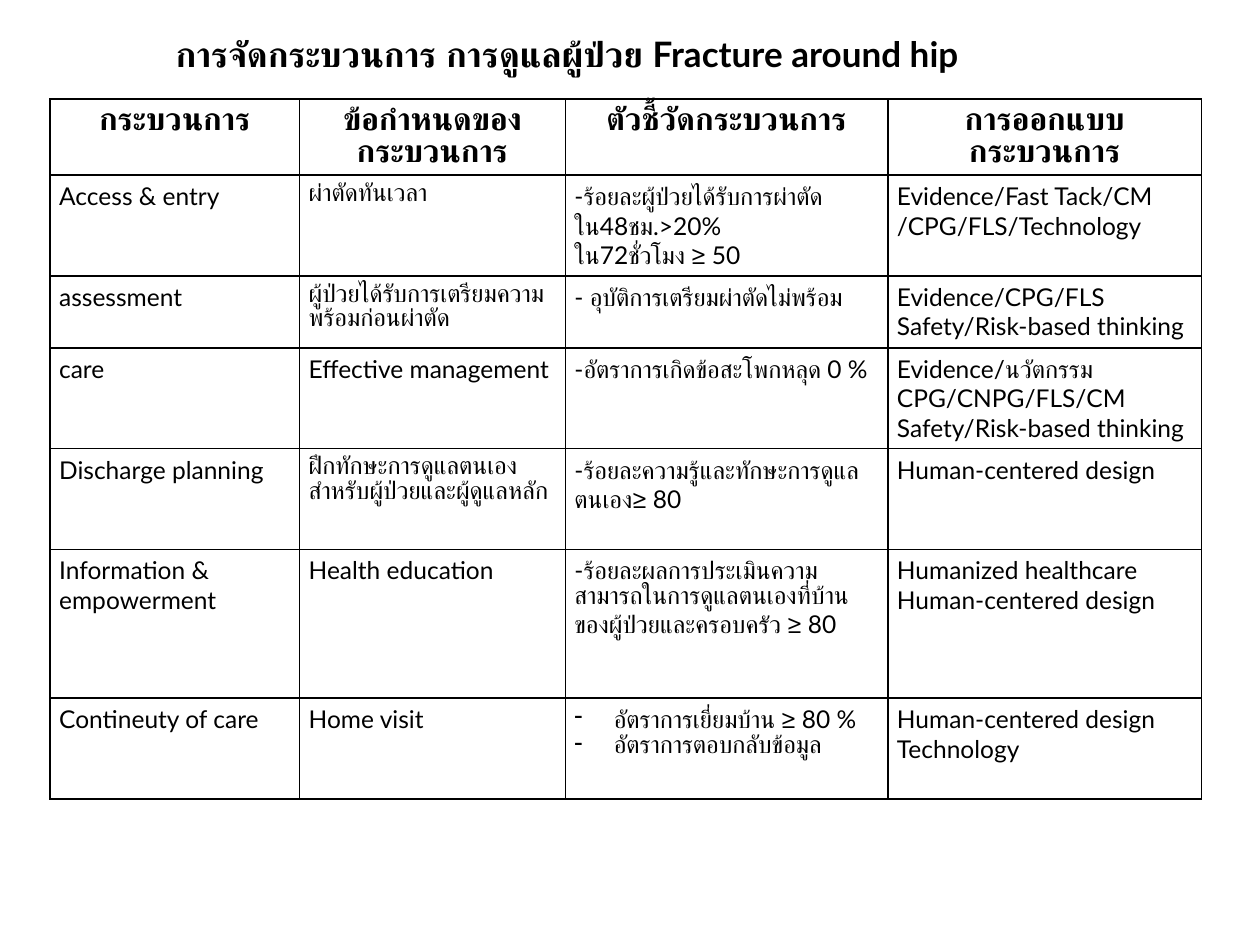
from lxml import etree
from pptx import Presentation
from pptx.dml.color import RGBColor
from pptx.enum.text import MSO_ANCHOR, PP_ALIGN
from pptx.oxml.ns import qn
from pptx.util import Pt

CENTER, LEFT = PP_ALIGN.CENTER, PP_ALIGN.LEFT
MIDDLE, TOP = MSO_ANCHOR.MIDDLE, MSO_ANCHOR.TOP
TITLE_ONLY = 5
FONT = "Lato"
COLORS = {"text": "000000", "border": "000000"}

TITLE = "การจัดกระบวนการ การดูแลผู้ป่วย Fracture around hip"
COL_WIDTHS = [142.6, 151.9, 184.3, 179.3]
ROW_HEIGHTS = [43.4, 57.6, 41, 57.6, 57.6, 85, 57.6]
ROWS = [
    ["กระบวนการ", "ข้อกำหนดของกระบวนการ", "ตัวชี้วัดกระบวนการ", "การออกแบบกระบวนการ"],
    ["Access & entry", "ผ่าตัดทันเวลา",
     "-ร้อยละผู้ป่วยได้รับการผ่าตัดใน48ชม.>20%\nใน72ชั่วโมง ≥ 50",
     "Evidence/Fast Tack/CM /CPG/FLS/Technology"],
    ["assessment", "ผู้ป่วยได้รับการเตรียมความพร้อมก่อนผ่าตัด",
     "- อุบัติการเตรียมผ่าตัดไม่พร้อม",
     "Evidence/CPG/FLS\nSafety/Risk-based thinking"],
    ["care", "Effective management", "-อัตราการเกิดข้อสะโพกหลุด 0 %",
     "Evidence/นวัตกรรม\nCPG/CNPG/FLS/CM\nSafety/Risk-based thinking"],
    ["Discharge planning", "ฝึกทักษะการดูแลตนเองสำหรับผู้ป่วยและผู้ดูแลหลัก",
     "-ร้อยละความรู้และทักษะการดูแลตนเอง≥ 80", "Human-centered design"],
    ["Information & empowerment", "Health education",
     "-ร้อยละผลการประเมินความสามารถในการดูแลตนเองที่บ้านของผู้ป่วยและครอบครัว ≥ 80",
     "Humanized healthcare\nHuman-centered design"],
    ["Contineuty of care", "Home visit",
     "อัตราการเยี่ยมบ้าน ≥ 80 %\nอัตราการตอบกลับข้อมูล",
     "Human-centered design\nTechnology"],
]
BULLETED = (6, 2)


def write_text(tf, text, size=14, bold=False, align=LEFT, bullet=None):
    tf.word_wrap = True
    for i, line in enumerate(text.split("\n")):
        p = tf.paragraphs[0] if i == 0 else tf.add_paragraph()
        p.alignment = align
        r = p.add_run()
        r.text = line
        r.font.name = FONT
        r.font.size = Pt(size)
        r.font.bold = bold
        r.font.color.rgb = RGBColor.from_string(COLORS["text"])
        if bullet:
            pPr = p._p.get_or_add_pPr()
            pPr.set("marL", str(Pt(22.5)))
            pPr.set("indent", str(-Pt(22.5)))
            etree.SubElement(pPr, qn("a:buChar")).set("char", bullet)


def add_title(s):
    sp = s.shapes.title
    sp.left, sp.top, sp.width, sp.height = Pt(45), Pt(0), Pt(558), Pt(61)
    sp.text_frame.vertical_anchor = MIDDLE
    write_text(sp.text_frame, TITLE, size=20, bold=True, align=CENTER)


def set_borders(cell, width=1):
    tcPr = cell._tc.get_or_add_tcPr()
    for i, side in enumerate(("lnL", "lnR", "lnT", "lnB")):
        ln = etree.Element(qn(f"a:{side}"), w=str(Pt(width)))
        fill = etree.SubElement(ln, qn("a:solidFill"))
        etree.SubElement(fill, qn("a:srgbClr")).set("val", COLORS["border"])
        tcPr.insert(i, ln)


def format_cell(cell, text, **fmt):
    cell.fill.background()
    cell.vertical_anchor = TOP
    cell.margin_left = cell.margin_right = Pt(5.2)
    cell.margin_top = cell.margin_bottom = Pt(3.6)
    write_text(cell.text_frame, text, **fmt)
    set_borders(cell)


def add_process_table(s):
    frame = s.shapes.add_table(len(ROWS), len(COL_WIDTHS), Pt(28.6), Pt(56.7),
                               Pt(sum(COL_WIDTHS)), Pt(sum(ROW_HEIGHTS)))
    table = frame.table
    table.horz_banding = False
    for col, width in zip(table.columns, COL_WIDTHS):
        col.width = Pt(width)
    for row, height in zip(table.rows, ROW_HEIGHTS):
        row.height = Pt(height)
    for i, texts in enumerate(ROWS):
        for j, text in enumerate(texts):
            if i == 0:
                fmt = {"size": 18, "bold": True, "align": CENTER}
            else:
                fmt = {"bullet": "-" if (i, j) == BULLETED else None}
            format_cell(table.cell(i, j), text, **fmt)


def main():
    prs = Presentation()
    prs.slide_width, prs.slide_height = Pt(720), Pt(540)
    s = prs.slides.add_slide(prs.slide_layouts[TITLE_ONLY])
    add_title(s)
    add_process_table(s)
    prs.save("out.pptx")


if __name__ == "__main__":
    main()
